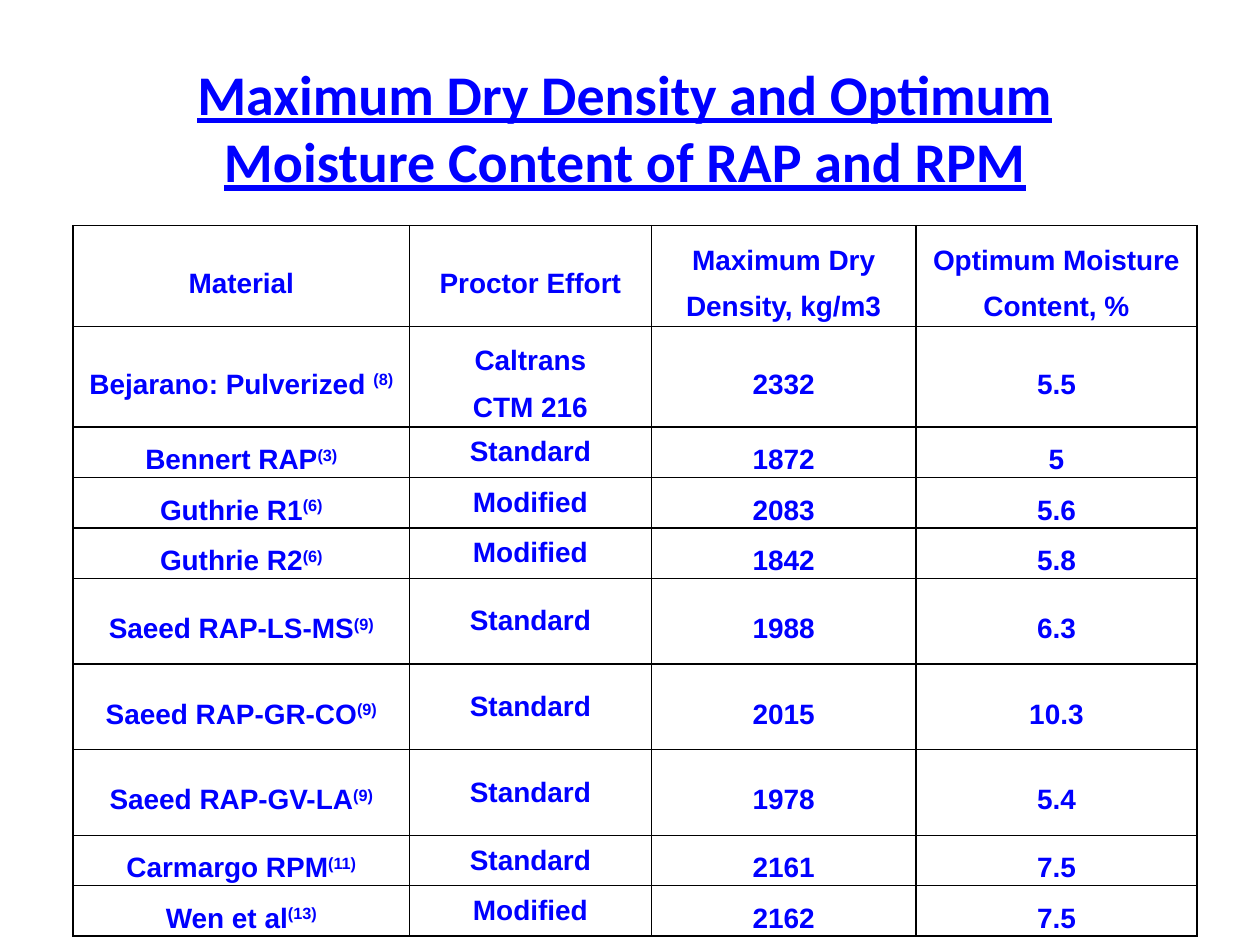
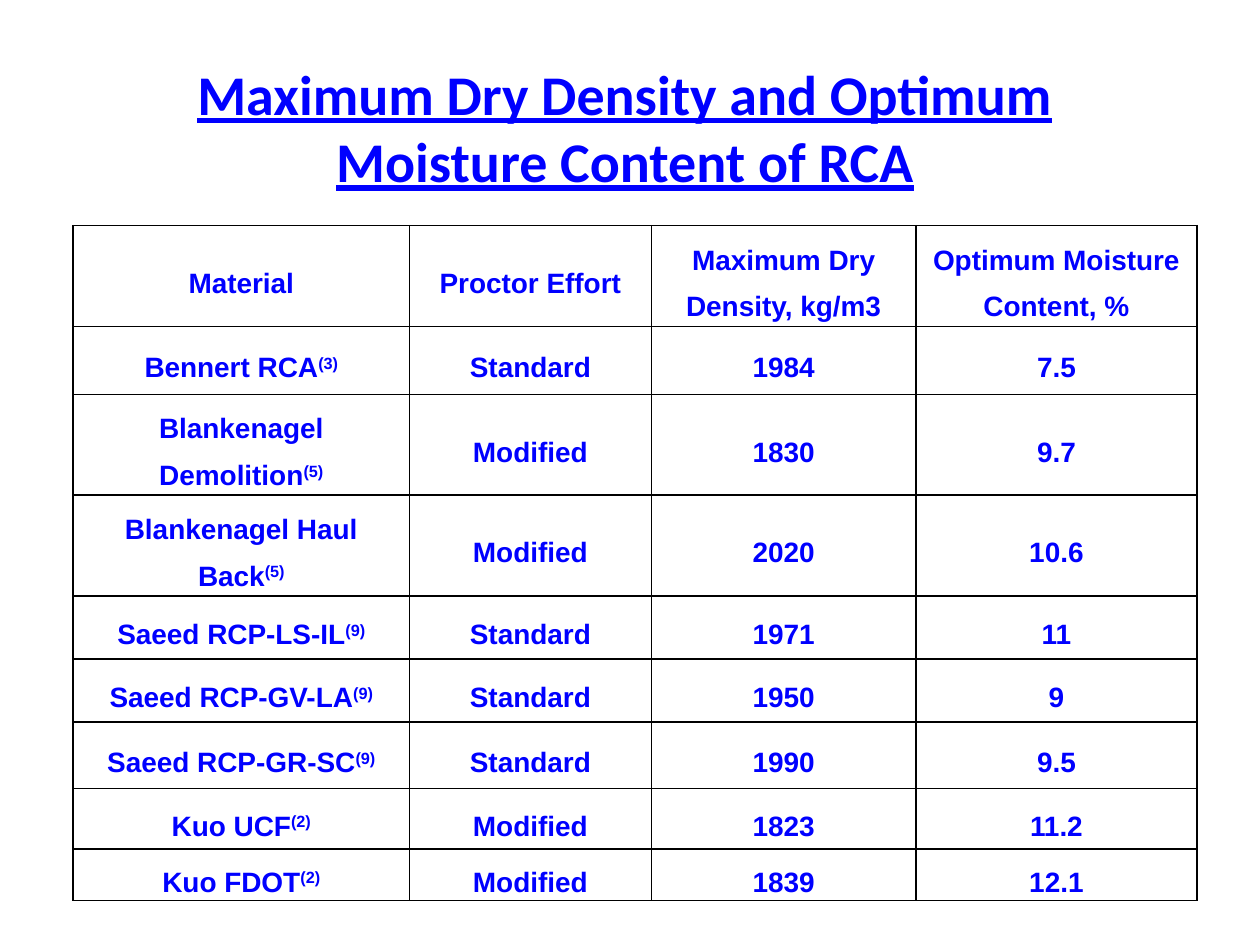
from lxml import etree
from pptx import Presentation, util as u
from pptx.dml.color import RGBColor
from pptx.enum import text
from pptx.oxml.ns import qn

# Content: material, reference, Proctor effort (one entry per line), density, moisture
HEADER = ["Material", "Proctor Effort", "Maximum Dry Density, kg/m3",
          "Optimum Moisture Content, %"]
SLIDES = [
    dict(title="Maximum Dry Density and Optimum Moisture Content of RAP and RPM",
         effort_spacing=1.0,
         heights=[0.73, 0.73] + [0.37] * 3 + [0.68] * 3 + [0.37] * 2,
         rows=[("Bejarano: Pulverized ", "(8)", ["Caltrans", "CTM 216"], "2332", "5.5"),
               ("Bennert RAP", "(3)", ["Standard"], "1872", "5"),
               ("Guthrie R1", "(6)", ["Modified"], "2083", "5.6"),
               ("Guthrie R2", "(6)", ["Modified"], "1842", "5.8"),
               ("Saeed RAP-LS-MS", "(9)", ["Standard"], "1988", "6.3"),
               ("Saeed RAP-GR-CO", "(9)", ["Standard"], "2015", "10.3"),
               ("Saeed RAP-GV-LA", "(9)", ["Standard"], "1978", "5.4"),
               ("Carmargo RPM", "(11)", ["Standard"], "2161", "7.5"),
               ("Wen et al", "(13)", ["Modified"], "2162", "7.5")]),
    dict(title="Maximum Dry Density and Optimum Moisture Content of RCA",
         effort_spacing=1.5,
         heights=[0.73, 0.54, 0.73, 0.73, 0.5, 0.5, 0.53, 0.48, 0.41],
         rows=[("Bennert RCA", "(3)", ["Standard"], "1984", "7.5"),
               ("Blankenagel Demolition", "(5)", ["Modified"], "1830", "9.7"),
               ("Blankenagel Haul Back", "(5)", ["Modified"], "2020", "10.6"),
               ("Saeed RCP-LS-IL", "(9)", ["Standard"], "1971", "11"),
               ("Saeed RCP-GV-LA", "(9)", ["Standard"], "1950", "9"),
               ("Saeed RCP-GR-SC", "(9)", ["Standard"], "1990", "9.5"),
               ("Kuo UCF", "(2)", ["Modified"], "1823", "11.2"),
               ("Kuo FDOT", "(2)", ["Modified"], "1839", "12.1")]),
]

# Shared style
COLORS = dict(ink="0000FF", border="000000", page="FFFFFF")
TITLE_BOX = (1.42, 0.42, 7.08, 1.18)
TABLE_LEFT, TABLE_TOP = 0.58, 1.79
COLUMNS = [2.67, 1.92, 2.1, 2.23]


def add_run(p, words, font, size, underline=False, raised=False):
    r = p.add_run()
    r.text = words
    r.font.name, r.font.size = font, u.Pt(size)
    r.font.bold, r.font.underline = True, underline
    r.font.color.rgb = RGBColor.from_string(COLORS["ink"])
    if raised:
        r._r.get_or_add_rPr().set("baseline", "30000")


def add_title(s, words):
    tf = s.shapes.add_textbox(*map(u.Inches, TITLE_BOX)).text_frame
    tf.word_wrap = True
    tf.auto_size = text.MSO_AUTO_SIZE.SHAPE_TO_FIT_TEXT
    p = tf.paragraphs[0]
    p.alignment = text.PP_ALIGN.CENTER
    add_run(p, words, "Calibri", 32, underline=True)


def add_borders(cell):
    tc_pr = cell._tc.get_or_add_tcPr()
    for i, side in enumerate(("lnL", "lnR", "lnT", "lnB")):
        ln = etree.Element(qn("a:" + side), w=str(u.Pt(1)))
        fill = etree.SubElement(ln, qn("a:solidFill"))
        etree.SubElement(fill, qn("a:srgbClr"), val=COLORS["border"])
        tc_pr.insert(i, ln)


def fill_cell(cell, lines, reference="", spacing=1.5):
    cell.fill.background()
    add_borders(cell)
    cell.vertical_anchor = text.MSO_ANCHOR.MIDDLE
    cell.margin_left = cell.margin_right = u.Inches(0.07)
    cell.margin_top = cell.margin_bottom = 0
    tf = cell.text_frame
    for i, line in enumerate(lines):
        p = tf.add_paragraph() if i else tf.paragraphs[0]
        p.alignment = text.PP_ALIGN.CENTER
        p.line_spacing = spacing
        add_run(p, line, "Arial", 16)
    if reference:
        add_run(p, reference, "Arial", 16, raised=True)


def add_density_table(s, heights, rows, effort_spacing):
    box = (TABLE_LEFT, TABLE_TOP, sum(COLUMNS), sum(heights))
    table = s.shapes.add_table(len(heights), len(COLUMNS), *map(u.Inches, box)).table
    table.first_row = table.horz_banding = False
    for column, width in zip(table.columns, COLUMNS):
        column.width = u.Inches(width)
    for row, height in zip(table.rows, heights):
        row.height = u.Inches(height)
    for j, heading in enumerate(HEADER):
        fill_cell(table.cell(0, j), [heading])
    for i, (material, reference, effort, density, moisture) in enumerate(rows, 1):
        fill_cell(table.cell(i, 0), [material], reference)
        # A two-line effort keeps the wide spacing
        fill_cell(table.cell(i, 1), effort,
                  spacing=1.5 if len(effort) > 1 else effort_spacing)
        fill_cell(table.cell(i, 2), [density])
        fill_cell(table.cell(i, 3), [moisture])


def main():
    prs = Presentation()
    prs.slide_width, prs.slide_height = u.Inches(10), u.Inches(7.5)
    for content in SLIDES:
        s = prs.slides.add_slide(prs.slide_layouts[6])
        s.background.fill.solid()
        s.background.fill.fore_color.rgb = RGBColor.from_string(COLORS["page"])
        add_title(s, content["title"])
        add_density_table(s, content["heights"], content["rows"],
                          content["effort_spacing"])
    prs.save("out.pptx")


if __name__ == "__main__":
    main()
